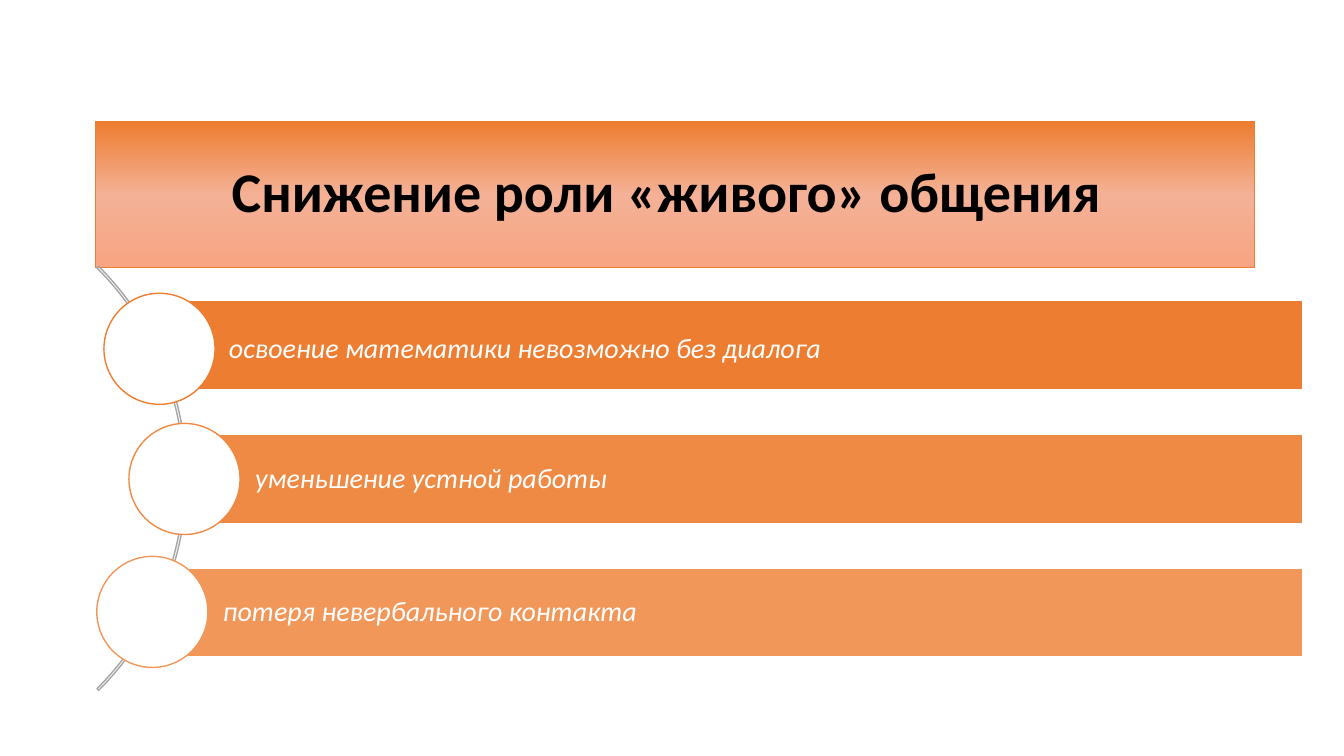
import copy

import pptx
import pptx.dml.color
import pptx.enum.shapes
import pptx.enum.text
import pptx.oxml.ns
import pptx.util

Cm = pptx.util.Cm
Pt = pptx.util.Pt
SHAPES = pptx.enum.shapes.MSO_SHAPE
ALIGN = pptx.enum.text.PP_ALIGN
TITLE_FONT = {"size": Pt(40), "bold": True, "italic": False}
BAR_FONT = {"size": Pt(20), "bold": False, "italic": True}


def color(value):
    return pptx.dml.color.RGBColor.from_string(value)


class SlideBuilder:
    def __init__(self, presentation, font_name):
        self.font_name = font_name
        self.slide = presentation.slides.add_slide(presentation.slide_layouts[5])

    def set_line(self, shape, line, width):
        shape.line.color.rgb = color(line)
        shape.line.width = Pt(width)

    def set_text(self, shape, text, text_color, font_format, alignment, insets):
        frame = shape.text_frame
        frame.text = text
        frame_format = {
            "word_wrap": True,
            "auto_size": pptx.enum.text.MSO_AUTO_SIZE.NONE,
            "vertical_anchor": pptx.enum.text.MSO_ANCHOR.MIDDLE,
        }
        for side, inset in zip(("left", "top", "right", "bottom"), insets):
            frame_format["margin_" + side] = Cm(inset)
        for name, value in frame_format.items():
            setattr(frame, name, value)
        paragraph = frame.paragraphs[0]
        paragraph.alignment = alignment
        paragraph.line_spacing = 0.9
        paragraph.space_before = Pt(0)
        for name, value in {"name": self.font_name, **font_format}.items():
            setattr(paragraph.font, name, value)
        paragraph.font.color.rgb = color(text_color)

    def title(self, text, box, stops, line):
        shape = self.slide.shapes.title
        for name, value in zip(("left", "top", "width", "height"), box):
            setattr(shape, name, Cm(value))
        fill = shape.fill
        fill.gradient()
        fill.gradient_angle = 270
        stop_list = shape._element.spPr.find(".//" + pptx.oxml.ns.qn("a:gsLst"))
        stop_list.append(copy.deepcopy(stop_list[0]))
        for stop, (position, value) in zip(fill.gradient_stops, stops):
            stop.position = position
            stop.color.rgb = color(value)
        self.set_line(shape, line, 0.5)
        self.set_text(shape, text, "000000", TITLE_FONT, ALIGN.CENTER, (0.25, 0.13, 0.7, 0.13))

    def shape(self, kind, box, fill, line):
        shape = self.slide.shapes.add_shape(kind, *map(Cm, box))
        shape.shadow.inherit = False
        if fill is None:
            shape.fill.background()
        else:
            shape.fill.solid()
            shape.fill.fore_color.rgb = color(fill)
        self.set_line(shape, line, 1)
        return shape

    def arc(self, box, adjustments, line):
        shape = self.shape(SHAPES.BLOCK_ARC, box, None, line)
        for index, value in enumerate(adjustments):
            shape.adjustments[index] = value

    def bar(self, text, box, fill, insets):
        shape = self.shape(SHAPES.RECTANGLE, box, fill, "FFFFFF")
        self.set_text(shape, text, "FFFFFF", BAR_FONT, ALIGN.LEFT, insets)

    def circle(self, left, top, diameter, line):
        self.shape(SHAPES.OVAL, (left, top, diameter, diameter), "FFFFFF", line)


def main():
    presentation = pptx.Presentation()
    presentation.slide_width = Cm(33.87)
    presentation.slide_height = Cm(19.05)
    builder = SlideBuilder(presentation, "Calibri")
    builder.title(
        "Снижение роли «живого» общения",
        (2.41, 3.07, 29.21, 3.68),
        ((0, "ED7D31"), (0.5, "F4B196"), (1, "F7A582")),
        "ED7D31",
    )
    builder.arc((-10.41, 4.5, 15.11, 15.11), (189, 27, 0.004), "A5A5A5")

    bar_right, bar_top, bar_step = 32.84, 7.58, 3.37
    points = (
        ("освоение математики невозможно без диалога", "ED7D31", 3.84, 2.62, 7.39, 1.93, 0.36),
        ("уменьшение устной работы", "EF8A45", 4.65, 3.25, 10.67, 1.78, 0.16),
        ("потеря невербального контакта", "F19759", 3.84, 2.44, 14.02, 1.78, 0.16),
    )
    for index, (text, fill, bar_left, circle_left, circle_top, indent, inset) in enumerate(points):
        box = (bar_left, bar_top + index * bar_step, bar_right - bar_left, 2.24)
        builder.bar(text, box, fill, (indent, inset, 0.16, 0.16))
        builder.circle(circle_left, circle_top, 2.8, fill)

    presentation.save("out.pptx")


if __name__ == "__main__":
    main()
